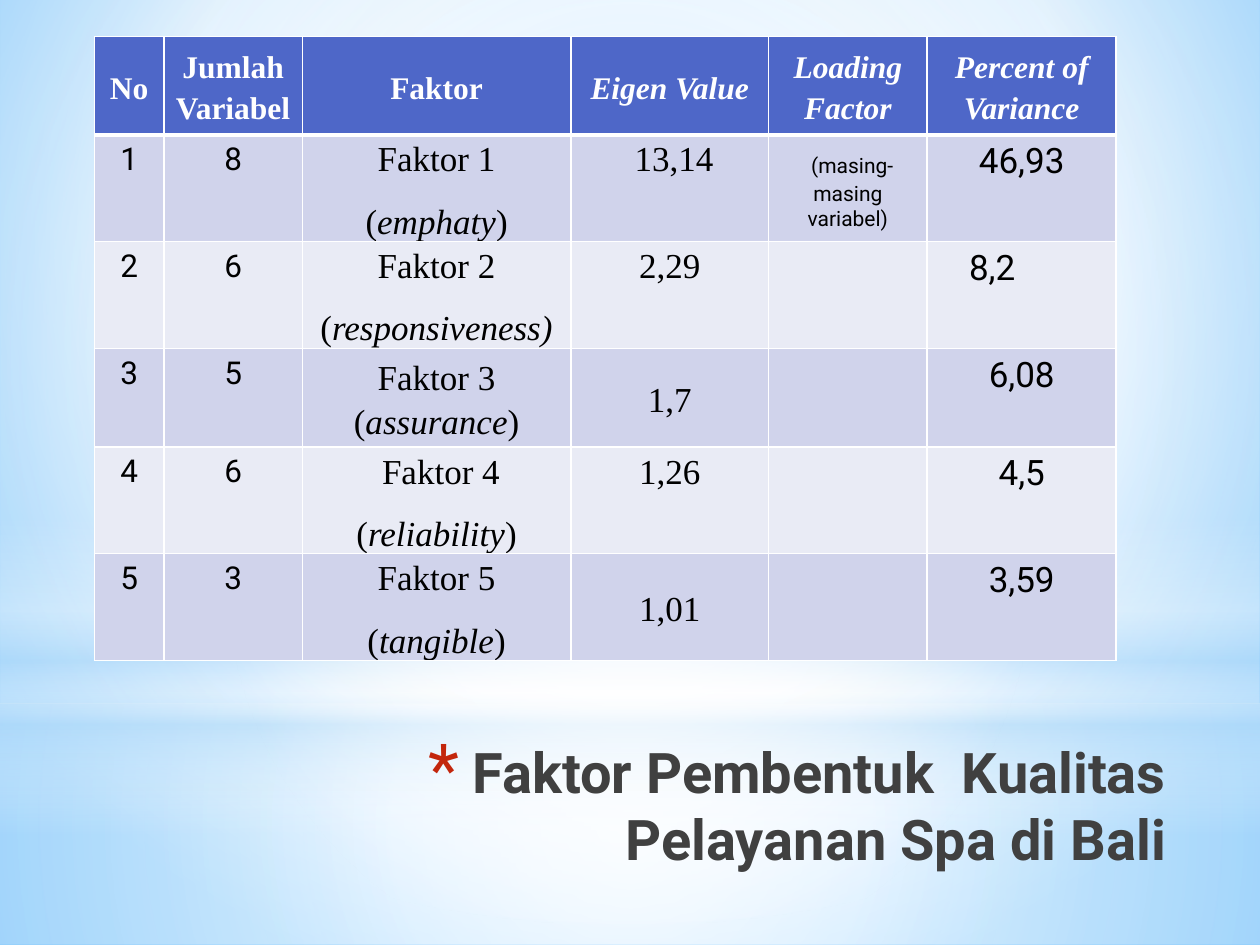
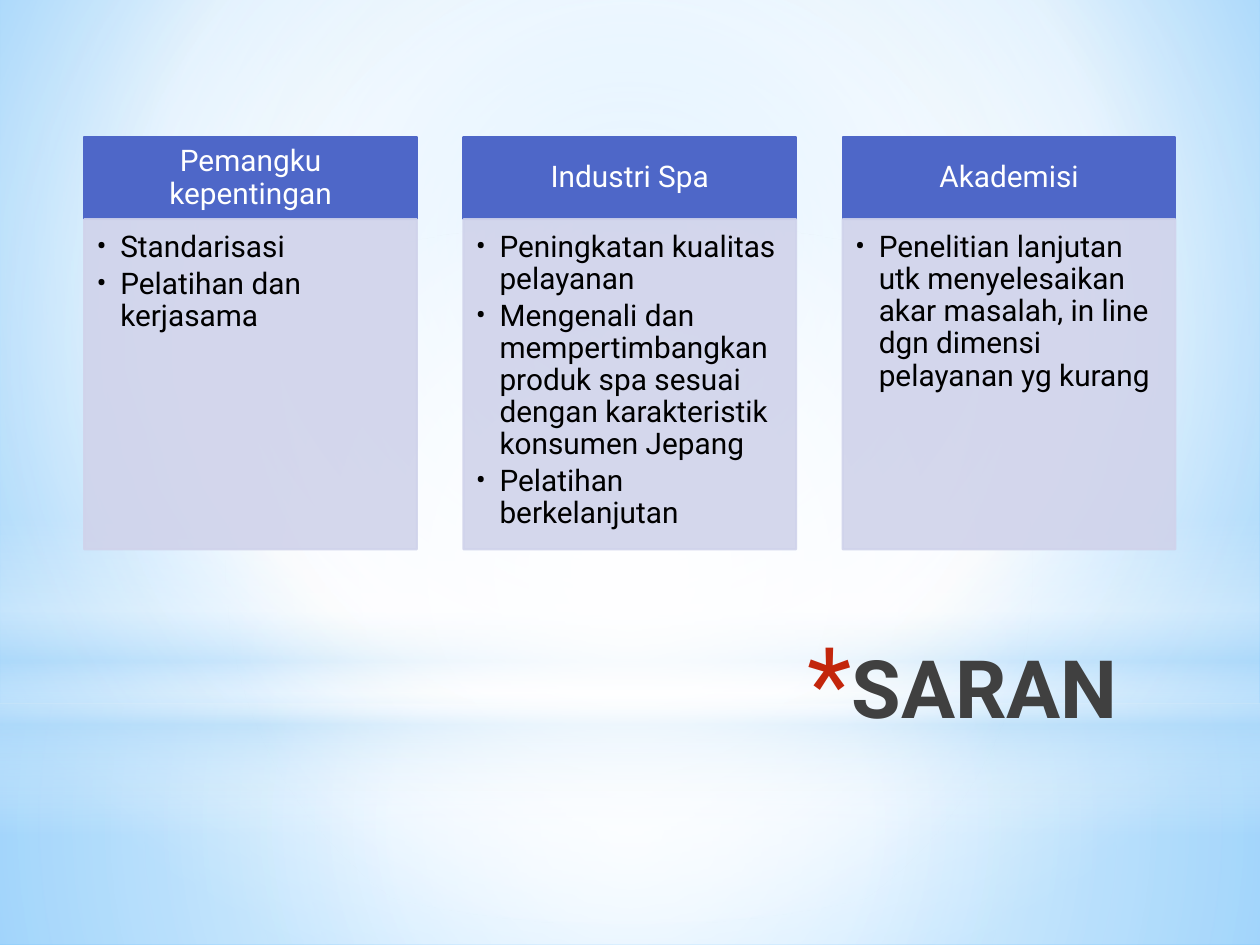
from lxml import etree
from pptx import Presentation
from pptx.dml.color import RGBColor
from pptx.enum.shapes import MSO_SHAPE
from pptx.enum.text import MSO_ANCHOR, MSO_AUTO_SIZE, PP_ALIGN
from pptx.oxml.ns import qn
from pptx.util import Pt

RECT, OVAL = MSO_SHAPE.RECTANGLE, MSO_SHAPE.OVAL
TOP, MIDDLE = MSO_ANCHOR.TOP, MSO_ANCHOR.MIDDLE
LEFT, CENTER, RIGHT = PP_ALIGN.LEFT, PP_ALIGN.CENTER, PP_ALIGN.RIGHT

SANS, SERIF = "Roboto", "Times New Roman"
WHITE, BLACK, SKY = "FFFFFF", "000000", "B4DCFA"
BLUE, LILAC, PALE = "4E67C8", "D0D3EB", "E9EBF5"
TITLE_GREY, STAR_RED = "404040", "C3260C"

BACKGROUND = [(0, "9ED5FF", 100), (60, WHITE, 100), (100, "5BB9FF", 100)]
CENTRE = (50, 50, 50, 50)
# kind, box, stops (position, colour, opacity), focus (None: vertical)
BACKDROP = [
    (RECT, (0, 401.8, 720, 138.2),
     [(0, WHITE, 91), (37, WHITE, 76), (100, SKY, 79)], CENTRE),
    (RECT, (0, 0, 720, 401.8),
     [(0, WHITE, 89), (48, WHITE, 62), (100, SKY, 79)], CENTRE),
    (RECT, (0, 296.6, 720, 180),
     [(0, WHITE, 0), (29, WHITE, 30), (45, SKY, 40), (55, WHITE, 26),
      (65, SKY, 60), (100, WHITE, 0)], None),
    (OVAL, (0, 126, 720, 401.8), [(0, WHITE, 100), (56, WHITE, 0)], CENTRE),
]

COLUMNS = [39.6, 79.2, 153.4, 113, 90.7, 108]
ROW_HEIGHT = 56.2
HEADERS = ["No", "Jumlah\vVariabel", "Faktor", "*Eigen Value*",
           "*Loading Factor*", "*Percent of Variance*"]
# variables, factor, dimension, eigenvalue, percent, anchor, space after
FACTORS = [
    ("8", "Faktor 1", "(*emphaty*)", " 13,14", "46,93", TOP, 10),
    ("6", "Faktor 2", "(*responsiveness)*", "2,29", "8,2", TOP, 10),
    ("5", "Faktor 3", "(*assurance*)", "1,7", "6,08", MIDDLE, 0),
    ("6", " Faktor 4", "(*reliability*)", "1,26", "4,5", TOP, 10),
    ("3", "Faktor 5", "(*tangible*)", "1,01", "3,59", MIDDLE, 10),
]

CARD_LEFT, CARD_STEP, CARD_WIDTH = 48.2, 216.7, 190.1
HEAD_TOP, HEAD_HEIGHT, BODY_HEIGHT = 78.5, 46.8, 188.6
ADVICE = [
    ("Pemangku kepentingan", ["Standarisasi", "Pelatihan dan kerjasama"]),
    ("Industri Spa", [
        "Peningkatan kualitas pelayanan",
        "Mengenali dan mempertimbangkan produk spa sesuai dengan "
        "karakteristik konsumen Jepang",
        "Pelatihan berkelanjutan"]),
    ("Akademisi", [
        "Penelitian lanjutan utk menyelesaikan akar masalah, in line dgn "
        "dimensi pelayanan yg kurang"]),
]


def rgb(value):
    return RGBColor.from_string(value)


def add(parent, tag, **attrs):
    return etree.SubElement(parent, qn(tag),
                            {k: str(v) for k, v in attrs.items()})


def apply(target, values):
    for name, value in values.items():
        setattr(target, name, value)


def set_gradient(parent, stops, focus):
    """Replace the solid fill of parent by a gradient."""
    grad = etree.Element(qn("a:gradFill"), rotWithShape="1")
    stop_list = add(grad, "a:gsLst")
    for position, color, opacity in stops:
        stop = add(stop_list, "a:gs", pos=position * 1000)
        clr = add(stop, "a:srgbClr", val=color)
        add(clr, "a:alpha", val=opacity * 1000)
    if focus:
        circle = add(grad, "a:path", path="circle")
        add(circle, "a:fillToRect",
            **{side: v * 1000 for side, v in zip("ltrb", focus)})
    else:
        add(grad, "a:lin", ang=5400000, scaled=0)
    solid = parent.find(qn("a:solidFill"))
    parent.replace(solid, grad)


def add_panel(s, kind, box, color):
    sp = s.shapes.add_shape(kind, *map(Pt, box))
    sp.shadow.inherit = False
    sp.fill.solid()
    sp.fill.fore_color.rgb = rgb(color)
    return sp


def build_backdrop(prs, s):
    """Put the background and light bands on the master, drawing them via s."""
    master = prs.slide_master
    master.background.fill.solid()
    set_gradient(master.element.xpath(".//p:bgPr")[0], BACKGROUND,
                 (20, 10, 20, 60))
    for i, (kind, box, stops, focus) in enumerate(BACKDROP):
        sp = add_panel(s, kind, box, WHITE)
        sp.line.fill.background()
        set_gradient(sp.element.spPr, stops, focus)
        sp.element.xpath(".//p:cNvPr")[0].set("id", str(100 + i))
        master.shapes.element.insert(2 + i, sp.element)


def set_bullet(p, char, indent, color, size=100):
    pPr = p._p.get_or_add_pPr()
    pPr.set("marL", str(Pt(indent)))
    pPr.set("indent", str(-Pt(indent)))
    add(add(pPr, "a:buClr"), "a:srgbClr", val=color)
    add(pPr, "a:buSzPct", val=size * 1000)
    add(pPr, "a:buFont", typeface=SANS)
    add(pPr, "a:buChar", char=char)


def add_run(p, text, size, font=SANS, color=BLACK, **style):
    for i, line in enumerate(text.split("\v")):
        if i:
            p.add_line_break()
        r = p.add_run()
        r.text = line
        apply(r.font, {"size": Pt(size), "name": font, "bold": False, **style})
        r.font.color.rgb = rgb(color)


def add_marked(p, text, size, **style):
    """Add runs, in italics between asterisks."""
    for i, part in enumerate(text.split("*")):
        if part:
            add_run(p, part, size, italic=i % 2 == 1, **style)


def paragraphs(tf, count, **values):
    result = [tf.paragraphs[0]] + [tf.add_paragraph() for _ in range(count - 1)]
    for p in result:
        apply(p, values)
    return result


def set_title(s, text, box, size):
    title = s.shapes.title
    apply(title, dict(zip(("left", "top", "width", "height"), map(Pt, box))))
    tf = title.text_frame
    apply(tf, {"word_wrap": True, "auto_size": MSO_AUTO_SIZE.NONE,
               "vertical_anchor": TOP})
    p, = paragraphs(tf, 1, alignment=RIGHT)
    set_bullet(p, "*", 25.2, STAR_RED, 128)
    add_run(p, text, size, color=TITLE_GREY, bold=True)


def style_cell(cell, fill, row):
    cell.fill.solid()
    cell.fill.fore_color.rgb = rgb(fill)
    widths = {"L": 1, "R": 1, "T": 3 if row == 1 else 1, "B": 1 if row else 3}
    tcPr = cell._tc.get_or_add_tcPr()
    for i, (side, width) in enumerate(widths.items()):
        ln = add(tcPr, f"a:ln{side}", w=Pt(width))
        add(add(ln, "a:solidFill"), "a:srgbClr", val=WHITE)
        tcPr.insert(i, ln)


def serif_cell(cell, lines, size, anchor, after, **style):
    apply(cell, {"margin_left": Pt(5), "margin_right": Pt(5), "margin_top": 0,
                 "margin_bottom": 0, "vertical_anchor": anchor})
    ps = paragraphs(cell.text_frame, len(lines), alignment=CENTER,
                    line_spacing=1.15, space_after=Pt(after))
    for p, line in zip(ps, lines):
        add_marked(p, line, size, font=SERIF, **style)


def sans_cell(cell, *runs):
    p, = paragraphs(cell.text_frame, 1, alignment=CENTER)
    for text, size in runs:
        add_run(p, text, size)


def add_factor_table(s):
    rows = len(FACTORS) + 1
    table = s.shapes.add_table(rows, len(COLUMNS), Pt(54), Pt(20.9),
                               Pt(sum(COLUMNS)), Pt(ROW_HEIGHT * rows)).table
    for column, width in zip(table.columns, COLUMNS):
        column.width = Pt(width)
    for i, row in enumerate(table.rows):
        row.height = Pt(ROW_HEIGHT)
        for cell in row.cells:
            style_cell(cell, (LILAC if i % 2 else PALE) if i else BLUE, i)
    for cell, text in zip(table.rows[0].cells, HEADERS):
        serif_cell(cell, [text], 18, MIDDLE, 10, color=WHITE, bold=True)
    for i, factor in enumerate(FACTORS, 1):
        count, name, dimension, eigen, percent, anchor, after = factor
        cells = list(table.rows[i].cells)
        sans_cell(cells[0], (str(i), 18))
        sans_cell(cells[1], (count, 18))
        serif_cell(cells[2], [name, dimension], 20, anchor, after)
        serif_cell(cells[3], [eigen], 20, anchor, after)
        sans_cell(cells[5], (percent, 20))
    sans_cell(table.cell(1, 4), (" ", 20), ("(masing-masing variabel)", 12))
    table.cell(2, 5).margin_right = Pt(41)


def add_card_part(s, box, color, lines, size, text_color, anchor, insets,
                  align, bullet=False):
    sp = add_panel(s, RECT, box, color)
    sp.line.color.rgb = rgb(color)
    sp.line.width = Pt(1.25)
    tf = sp.text_frame
    sides = ("margin_left", "margin_top", "margin_right", "margin_bottom")
    apply(tf, {"word_wrap": True, "vertical_anchor": anchor,
               **dict(zip(sides, map(Pt, insets)))})
    ps = paragraphs(tf, len(lines), alignment=align, line_spacing=0.9,
                    space_after=Pt(2.6 if bullet else 0))
    for p, line in zip(ps, lines):
        if bullet:
            set_bullet(p, "•", 13.5, text_color)
        add_run(p, line, size, color=text_color)
    return sp


def add_card(s, left, heading, items):
    add_card_part(s, (left, HEAD_TOP, CARD_WIDTH, HEAD_HEIGHT), BLUE,
                  [heading], 17, WHITE, MIDDLE, (9.5, 5.5, 9.5, 5.5), CENTER)
    body = add_card_part(
        s, (left, HEAD_TOP + HEAD_HEIGHT, CARD_WIDTH, BODY_HEIGHT), LILAC,
        items, 17, BLACK, TOP, (7.2, 7.2, 9.5, 10.7), LEFT, bullet=True)
    for clr in body.element.xpath("./p:spPr//a:srgbClr"):
        add(clr, "a:alpha", val=90000)


def main():
    prs = Presentation()
    prs.slide_width, prs.slide_height = Pt(720), Pt(540)
    title_only = prs.slide_layouts[5]

    s = prs.slides.add_slide(title_only)
    build_backdrop(prs, s)
    add_factor_table(s)
    set_title(s, "Faktor Pembentuk  Kualitas Pelayanan Spa di Bali",
              (161.3, 417.6, 512.6, 90), 32)

    s = prs.slides.add_slide(title_only)
    set_title(s, "SARAN", (133.2, 360.7, 512.6, 90), 46)
    for i, (heading, items) in enumerate(ADVICE):
        add_card(s, CARD_LEFT + i * CARD_STEP, heading, items)

    prs.save("out.pptx")


if __name__ == "__main__":
    main()
